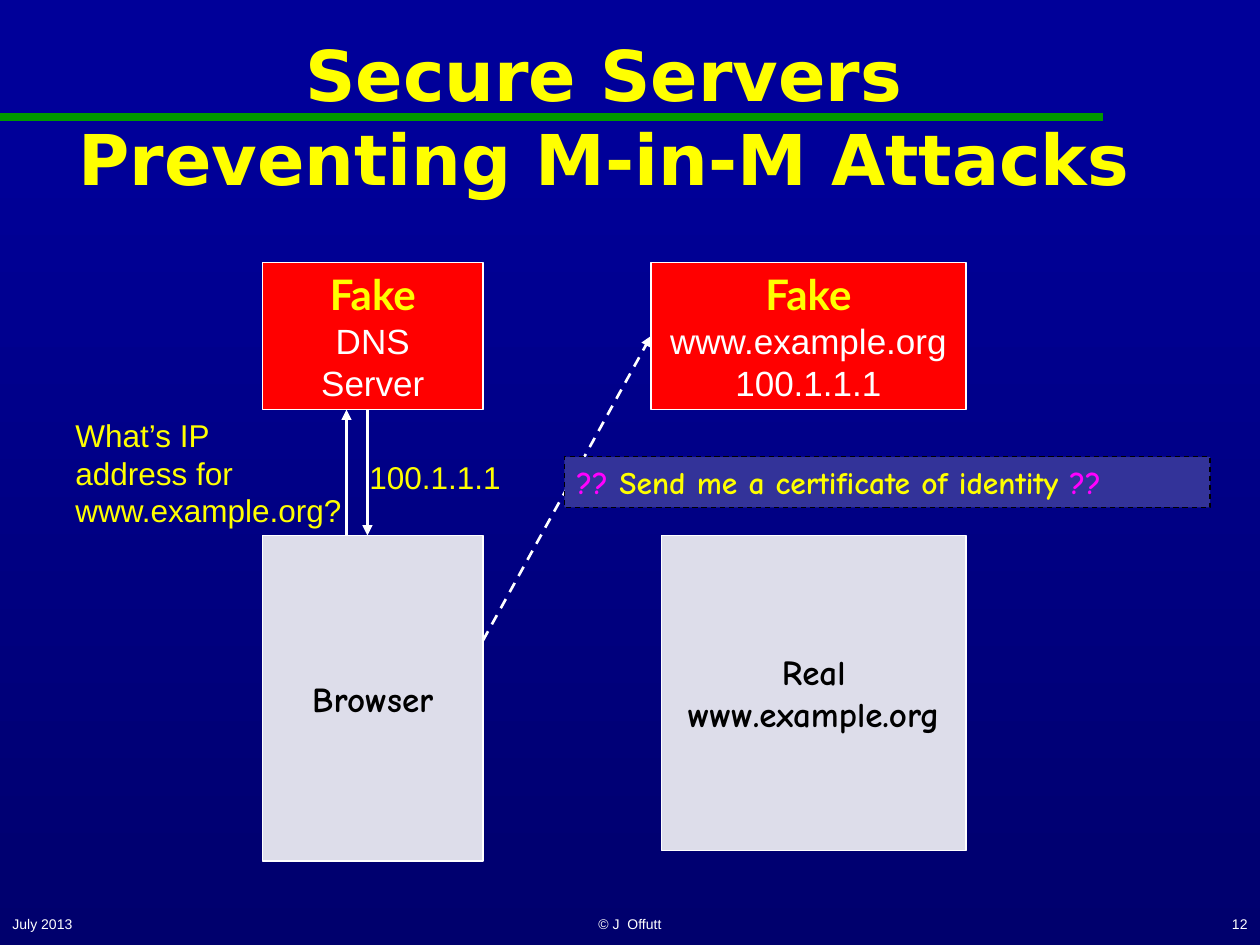
import copy
import dataclasses

import pptx
import pptx.dml.color
import pptx.enum.dml
import pptx.enum.shapes
import pptx.enum.text
import pptx.oxml.ns
import pptx.util
from lxml import etree

Pt = pptx.util.Pt
RGB = pptx.dml.color.RGBColor.from_string
ALIGN = pptx.enum.text.PP_ALIGN
ANCHOR = pptx.enum.text.MSO_ANCHOR
FIT = pptx.enum.text.MSO_AUTO_SIZE
DASH = pptx.enum.dml.MSO_LINE.DASH


@dataclasses.dataclass(frozen=True)
class Theme:
    top: str = "000099"
    bottom: str = "00006D"
    rule: str = "009900"
    yellow: str = "FFFF00"
    white: str = "FFFFFF"
    black: str = "000000"
    magenta: str = "FF00FF"
    fake: str = "FF0000"
    real: str = "DDDDEA"
    banner: str = "333399"
    title_size: int = 40
    fake_size: int = 24
    box_size: int = 20
    label_size: int = 18
    footer_size: int = 8

    def font(self, name, size, color, bold=False):
        return {"name": name, "size": Pt(size), "bold": bold, "color": color}


class Deck:
    """Holds the theme and the current slide, and draws each kind of element."""

    def __init__(self, theme):
        self.theme = theme
        self.prs = pptx.Presentation()
        self.prs.slide_width, self.prs.slide_height = Pt(720), Pt(540)
        self.s = self.prs.slides.add_slide(self.prs.slide_layouts[5])

    def background(self):
        fill = self.s.background.fill
        fill.gradient()
        fill.gradient_angle = 270
        stops = ((0.13, self.theme.top), (1, self.theme.bottom))
        for stop, (position, color) in zip(fill.gradient_stops, stops):
            stop.position = position
            stop.color.rgb = RGB(color)

    def run(self, p, text, font):
        r = p.add_run()
        r.text = text
        for key, value in font.items():
            if key == "color":
                r.font.color.rgb = RGB(value)
            else:
                setattr(r.font, key, value)
        return r

    def fill_text(self, sp, paragraphs, align=ALIGN.LEFT, **frame):
        tf = sp.text_frame
        for key, value in frame.items():
            setattr(tf, key, value)
        for i, runs in enumerate(paragraphs):
            p = tf.add_paragraph() if i else tf.paragraphs[0]
            p.alignment = align
            for text, font in runs:
                self.run(p, text, font)

    def title(self, lines, at):
        sp = self.s.shapes.title
        sp.left, sp.top, sp.width, sp.height = map(Pt, at)
        t = self.theme
        font = t.font("DejaVu Sans", t.title_size, t.yellow, True)
        self.fill_text(sp, [[(lines[0], font)]], ALIGN.CENTER, word_wrap=True,
                       auto_size=FIT.NONE, vertical_anchor=ANCHOR.MIDDLE)
        p = sp.text_frame.paragraphs[0]
        for line in lines[1:]:
            p.add_line_break()
            r = self.run(p, line, font)
            r._r.getprevious().append(copy.deepcopy(r._r.rPr))

    def rect(self, at, fill, line, dash=None):
        sp = self.s.shapes.add_shape(
            pptx.enum.shapes.MSO_SHAPE.RECTANGLE, *map(Pt, at))
        sp.shadow.inherit = False
        sp.fill.solid()
        sp.fill.fore_color.rgb = RGB(fill)
        sp.line.color.rgb = RGB(line)
        sp.line.width = Pt(0.75)
        sp.line.dash_style = dash
        return sp

    def box(self, at, fill, paragraphs):
        sp = self.rect(at, fill, self.theme.white)
        self.fill_text(sp, paragraphs, ALIGN.CENTER, word_wrap=False,
                       vertical_anchor=ANCHOR.MIDDLE)
        return sp

    def banner(self, at, runs):
        sp = self.rect(at, self.theme.banner, self.theme.black, DASH)
        self.fill_text(sp, [runs], word_wrap=True, vertical_anchor=ANCHOR.TOP,
                       auto_size=FIT.SHAPE_TO_FIT_TEXT)

    def label(self, at, lines):
        sp = self.s.shapes.add_textbox(*map(Pt, at))
        t = self.theme
        font = t.font("Arial", t.label_size, t.yellow)
        self.fill_text(sp, [[(line, font)] for line in lines], word_wrap=False,
                       auto_size=FIT.SHAPE_TO_FIT_TEXT)

    def footer(self, left, width, text, align):
        sp = self.s.shapes.add_textbox(Pt(left), Pt(516), Pt(width), Pt(24))
        t = self.theme
        font = t.font("Arial", t.footer_size, t.white)
        self.fill_text(sp, [[(text, font)]], align, word_wrap=True,
                       vertical_anchor=ANCHOR.MIDDLE)

    def line(self, ends, color, width, arrow=False, dash=None):
        sp = self.s.shapes.add_connector(
            pptx.enum.shapes.MSO_CONNECTOR.STRAIGHT, *map(Pt, ends))
        sp.line.color.rgb = RGB(color)
        sp.line.width = Pt(width)
        sp.line.dash_style = dash
        qn = pptx.oxml.ns.qn
        if arrow:
            ln = sp._element.spPr.find(qn("a:ln"))
            etree.SubElement(ln, qn("a:tailEnd"), type="triangle")
        etree.SubElement(sp._element.spPr, qn("a:effectLst"))
        return sp


def main():
    t = Theme()
    d = Deck(t)
    fake = t.font("Lato", t.fake_size, t.yellow, True)
    server = t.font("Arial", t.box_size, t.white)
    real = t.font("Comic Neue", t.box_size, t.black, True)
    ask = t.font("Comic Neue", t.label_size, t.yellow, True)
    doubt = {**ask, "color": t.magenta}

    d.background()
    d.line((0, 67, 630, 67), t.rule, 4.5)
    d.title(("Secure Servers", "Preventing M-in-M Attacks"), (6, 6, 678, 120))

    d.box((150, 306, 126, 186), t.real, [[("Browser", real)]])
    d.box((150, 150, 126, 84), t.fake,
          [[("Fake", fake)], [("DNS", server)], [("Server", server)]])
    site = d.box((372, 150, 180, 84), t.fake,
                 [[("Fake", fake)], [("www.example.org", server)],
                  [("100.1.1.1", server)]])
    d.box((378, 306, 174, 180), t.real,
          [[("Real", real)], [("www.example.org", real)]])

    d.line((198, 306, 198, 234), t.white, 1.5, arrow=True)
    d.label((36, 234, 168, 73),
            ("What’s IP", "address for", "www.example.org?"))
    d.line((210, 234, 210, 306), t.white, 1.5, arrow=True)
    d.label((204, 258, 90, 29), ("100.1.1.1",))

    request = d.line((276, 366, 372, 192), t.white, 1.5, True, DASH)
    request.end_connect(site, 1)
    d.banner((322.5, 261, 369, 29),
             [("??", doubt), (" Send me a certificate of identity ", ask),
              ("??", doubt)])

    d.footer(0, 150, "July 2013", ALIGN.LEFT)
    d.footer(246, 228, "© J  Offutt", ALIGN.CENTER)
    d.footer(570, 150, "12", ALIGN.RIGHT)
    d.prs.save("out.pptx")


if __name__ == "__main__":
    main()
